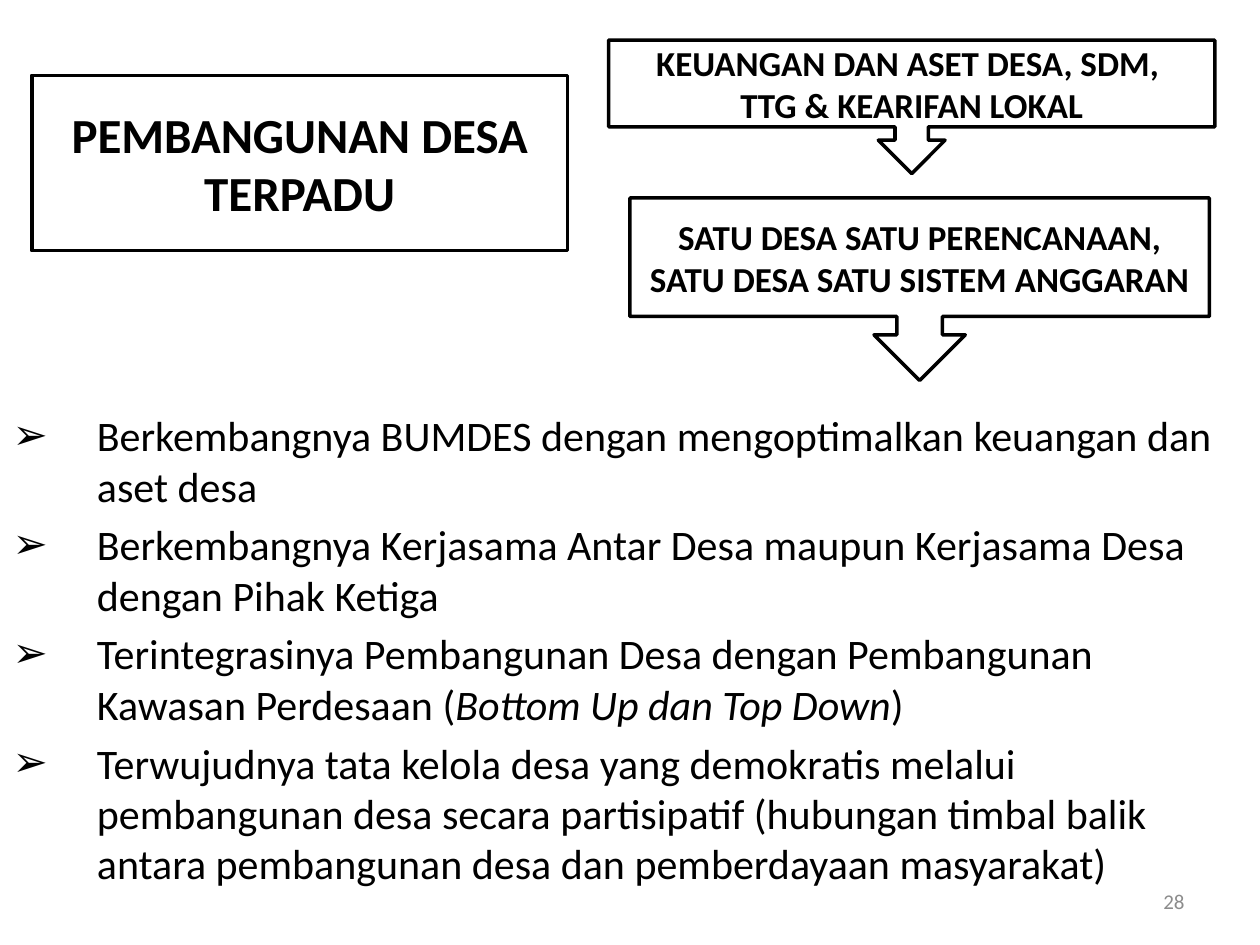
from lxml import etree
from pptx import Presentation
from pptx import util as u
from pptx.dml.color import RGBColor
from pptx.enum import shapes, text
from pptx.oxml.ns import qn

COLOURS = {"ink": "000000", "paper": "FFFFFF", "number": "8C8C8C"}


def format_text(box, size, colour, bold, align):
    for para in box.text_frame.paragraphs:
        para.alignment = align
        for span in para.runs:
            span.font.name = "Calibri"
            span.font.size = u.Pt(size)
            span.font.bold = bold
            span.font.color.rgb = RGBColor.from_string(COLOURS[colour])


def place(box, left, top, width, height):
    box.left, box.top = u.Cm(left), u.Cm(top)
    box.width, box.height = u.Cm(width), u.Cm(height)


deck = Presentation()
deck.slide_width, deck.slide_height = u.Cm(25.4), u.Cm(19.05)
page = deck.slides.add_slide(deck.slide_layouts[1])

title = page.shapes.title
place(title, 0.64, 1.52, 10.8, 3.53)
title.text_frame.text = "PEMBANGUNAN DESA TERPADU"
format_text(title, 28, "ink", True, text.PP_ALIGN.CENTER)

callouts = [
    ("SATU DESA SATU PERENCANAAN,\nSATU DESA SATU SISTEM ANGGARAN", 12.7, 3.99, 11.68, 3.68),
    ("KEUANGAN DAN ASET DESA, SDM, \nTTG & KEARIFAN LOKAL", 12.27, 0.81, 12.22, 2.69),
]
framed = [title]
for wording, left, top, width, height in callouts:
    callout = page.shapes.add_shape(
        shapes.MSO_SHAPE.DOWN_ARROW_CALLOUT, u.Cm(left), u.Cm(top), u.Cm(width), u.Cm(height))
    callout.shadow.inherit = False
    callout.text_frame.text = wording
    format_text(callout, 20, "ink", True, text.PP_ALIGN.CENTER)
    framed.append(callout)

for box in framed:
    box.fill.solid()
    box.fill.fore_color.rgb = RGBColor.from_string(COLOURS["paper"])
    box.line.color.rgb = RGBColor.from_string(COLOURS["ink"])
    box.line.width = u.Pt(2)
    box.text_frame.word_wrap = True
    box.text_frame.auto_size = text.MSO_AUTO_SIZE.NONE
    box.text_frame.vertical_anchor = text.MSO_ANCHOR.MIDDLE

outcomes = [
    ["Berkembangnya BUMDES dengan mengoptimalkan keuangan dan aset desa"],
    ["Berkembangnya Kerjasama Antar Desa maupun Kerjasama Desa dengan Pihak Ketiga"],
    ["Terintegrasinya Pembangunan Desa dengan Pembangunan Kawasan Perdesaan (",
     "Bottom Up dan Top Down", ")"],
    ["Terwujudnya tata kelola desa yang demokratis melalui pembangunan desa secara partisipatif "
     "(hubungan timbal balik antara pembangunan desa dan pemberdayaan masyarakat)"],
]
body = page.placeholders[1]
place(body, 0, 8.13, 25.4, 10.92)
frame = body.text_frame
frame.auto_size = text.MSO_AUTO_SIZE.NONE
frame.vertical_anchor = text.MSO_ANCHOR.TOP
for index, parts in enumerate(outcomes):
    para = frame.add_paragraph() if index else frame.paragraphs[0]
    para.level = 4
    properties = para._p.get_or_add_pPr()
    properties.set("marL", str(u.Cm(1.7)))
    properties.set("indent", str(-u.Cm(1.7)))
    etree.SubElement(properties, qn("a:buChar")).set("char", "➢")
    para.space_before = u.Pt(4.8 if index else 0)
    for position, part in enumerate(parts):
        span = para.add_run()
        span.text = part
        span.font.italic = position == 1
format_text(body, 24, "ink", False, text.PP_ALIGN.LEFT)

number = page.shapes.add_textbox(u.Cm(18.21), u.Cm(17.65), u.Cm(5.92), u.Cm(1.02))
number.text_frame.word_wrap = True
number.text_frame.vertical_anchor = text.MSO_ANCHOR.MIDDLE
number.text_frame.text = "28"
format_text(number, 12, "number", False, text.PP_ALIGN.RIGHT)

deck.save("out.pptx")
